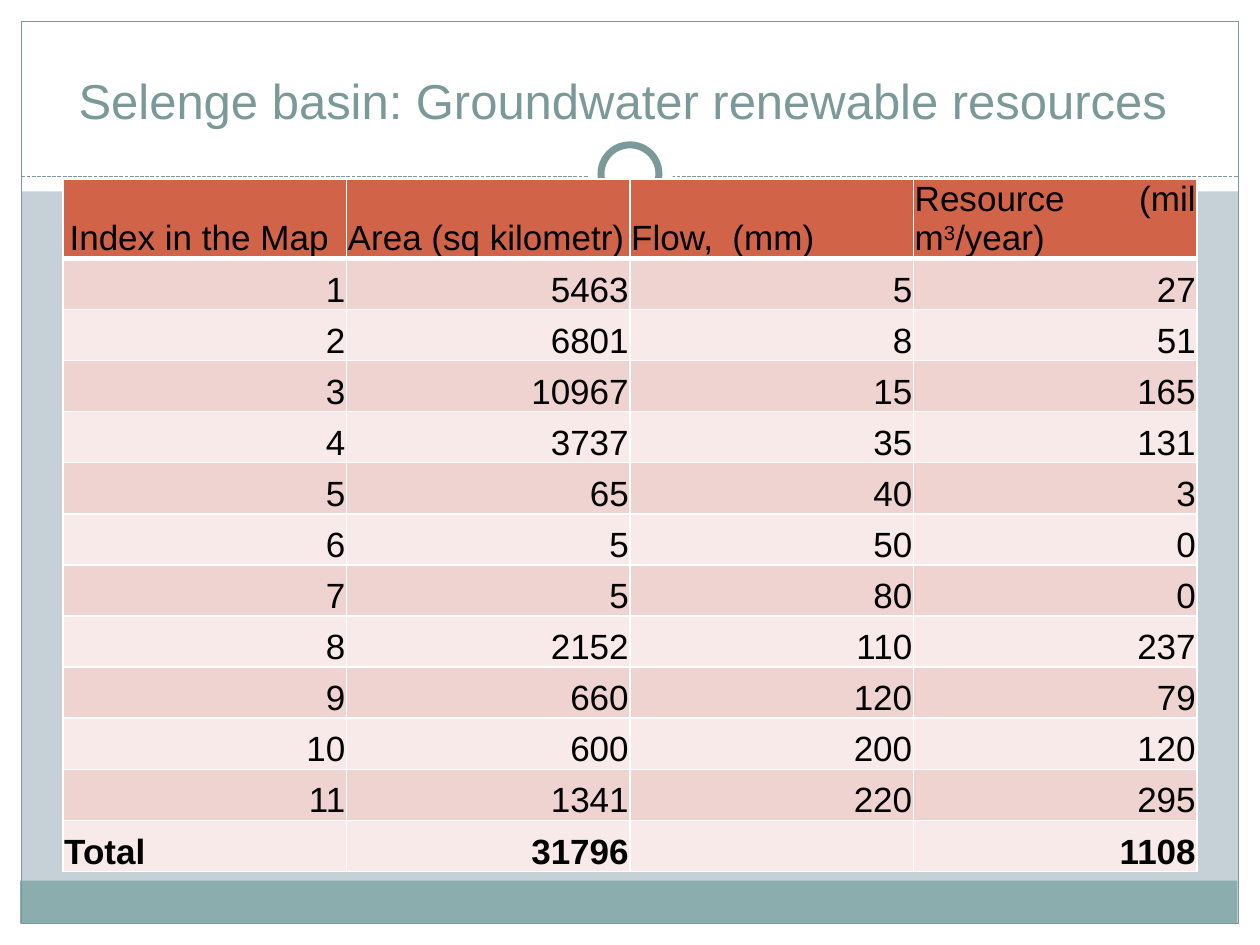
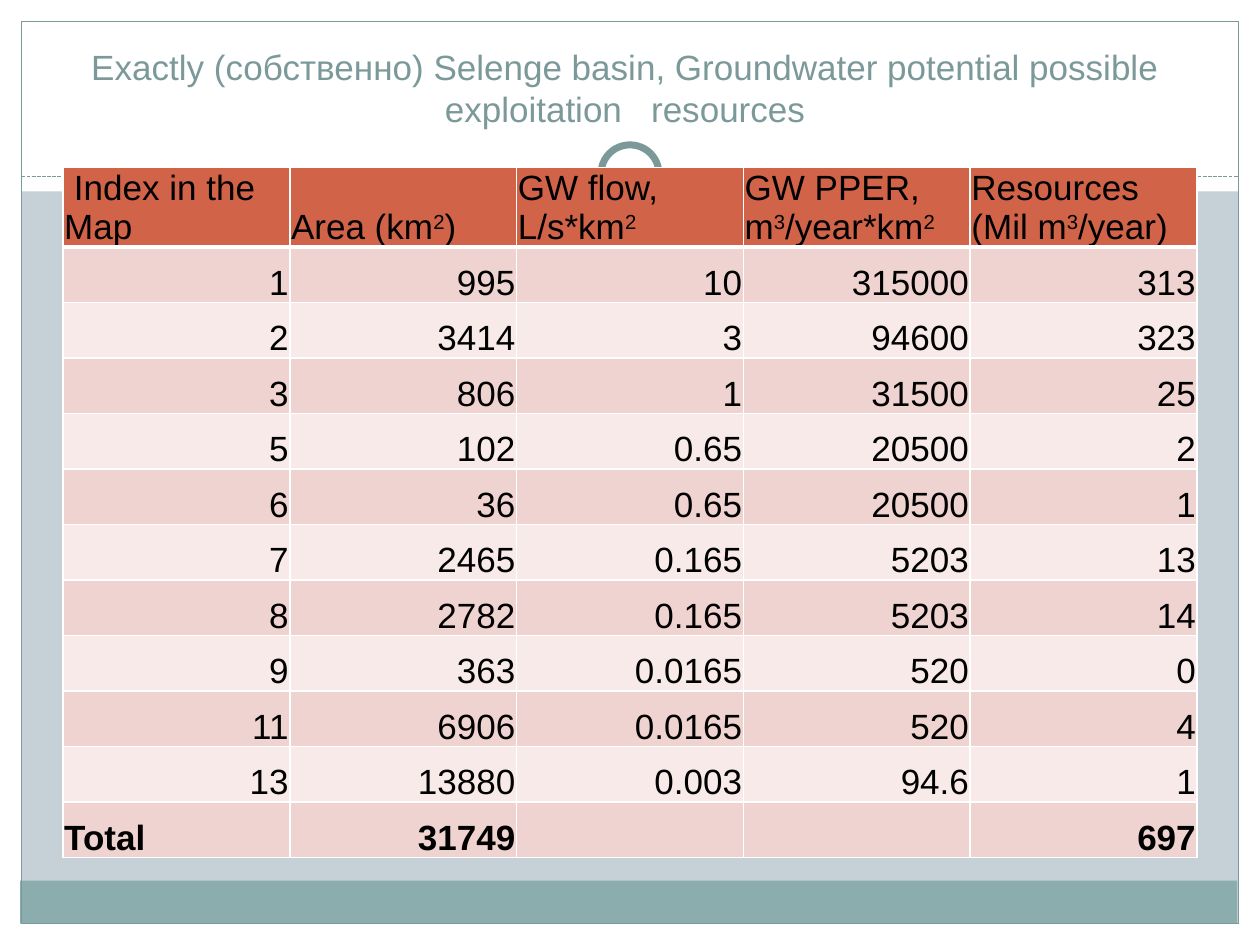
"""Build two slides of Selenge basin groundwater resource tables."""
import dataclasses
import typing

import lxml.etree
import pptx
import pptx.dml.color
import pptx.enum.dml
import pptx.enum.shapes
import pptx.enum.text
import pptx.oxml.ns
import pptx.slide
import pptx.table
import pptx.text.text
import pptx.util

Inches = pptx.util.Inches
Pt = pptx.util.Pt
Align = pptx.enum.text.PP_ALIGN
Anchor = pptx.enum.text.MSO_ANCHOR
Preset = pptx.enum.shapes.MSO_SHAPE
qn = pptx.oxml.ns.qn

FONT = "Arial"
WHITE, BLACK = "FFFFFF", "000000"
BACKDROP, TEAL, FOOTER = "C5D1D7", "7C999A", "8CADAE"
HEADER, BANDS = "D16349", ("EED3D0", "F7EAE9")
HEADER_HEIGHT = 0.62
CELL_FORMAT = {
    "vertical_anchor": Anchor.BOTTOM,
    "margin_left": Inches(0.01),
    "margin_right": Inches(0.01),
    "margin_top": Inches(0.01),
    "margin_bottom": 0,
}
TITLE_FORMAT = {
    "vertical_anchor": Anchor.BOTTOM,
    "word_wrap": True,
    "auto_size": pptx.enum.text.MSO_AUTO_SIZE.NONE,
}


class Box(typing.NamedTuple):
    left: float
    top: float
    width: float
    height: float

    def lengths(self) -> list[int]:
        return [Inches(value) for value in self]


@dataclasses.dataclass(frozen=True)
class FramePart:
    box: Box
    fill: str | None = WHITE
    line: str | None = None
    weight: float = 0.75
    preset: Preset = Preset.RECTANGLE


class Run(typing.NamedTuple):
    text: str
    size: float = 20
    raised: bool = False


class Heading(typing.NamedTuple):
    runs: list[Run]
    align: Align = Align.LEFT


@dataclasses.dataclass(frozen=True)
class ResourceSlide:
    title: str
    title_size: float
    title_box: Box
    table_box: Box
    headings: list[Heading]
    rows: list[str]


SQUARED, CUBED = Run("2", raised=True), Run("3", raised=True)

FRAME_BANDS = [
    FramePart(Box(0, 7.33, 10, 0.17)),
    FramePart(Box(0, 0, 10, 1.52)),
    FramePart(Box(0, 0, 0.17, 7.5)),
    FramePart(Box(9.83, 0, 0.17, 7.5)),
    FramePart(Box(0.16, 6.99, 9.66, 0.34), FOOTER),
    FramePart(Box(0.17, 0.17, 9.66, 7.16), None, TEAL),
]
FRAME_RING = [
    FramePart(Box(4.67, 1.05, 0.67, 0.67), preset=Preset.OVAL),
    FramePart(Box(4.77, 1.15, 0.46, 0.46), WHITE, TEAL, 4, Preset.OVAL),
]

RESOURCE_SLIDES = [
    ResourceSlide(
        "Selenge basin: Groundwater renewable resources ",
        28,
        Box(0.33, 0.25, 9.33, 0.83),
        Box(0.5, 1.42, 9, 5.49),
        [
            Heading([Run(" ", 11), Run("Index in the Map")]),
            Heading([Run("Area (sq kilometr)")], Align.JUSTIFY),
            Heading([Run("Flow,  (mm)")], Align.JUSTIFY),
            Heading([Run("Resource (mil m"), CUBED, Run("/year)")], Align.JUSTIFY),
        ],
        [
            "1|5463|5|27",
            "2|6801|8|51",
            "3|10967|15|165",
            "4|3737|35|131",
            "5|65|40|3",
            "6|5|50|0",
            "7|5|80|0",
            "8|2152|110|237",
            "9|660|120|79",
            "10|600|200|120",
            "11|1341|220|295",
            "Total|31796||1108",
        ],
    ),
    ResourceSlide(
        "Exactly (собственно) Selenge basin, Groundwater potential possible  exploitation   resources ",
        20,
        Box(0.5, 0.3, 9, 0.78),
        Box(0.5, 1.33, 9, 5.47),
        [
            Heading([Run(" Index in the Map")]),
            Heading([Run("Area (km"), SQUARED, Run(")")]),
            Heading([Run("GW flow, L/s*km"), SQUARED]),
            Heading([Run("GW PPER, m"), CUBED, Run("/year*km"), SQUARED]),
            Heading([Run("Resources (Mil m"), CUBED, Run("/year)")], Align.JUSTIFY),
        ],
        [
            "1|995|10|315000|313",
            "2|3414|3|94600|323",
            "3|806|1|31500|25",
            "5|102|0.65|20500|2",
            "6|36|0.65|20500|1",
            "7|2465|0.165|5203|13",
            "8|2782|0.165|5203|14",
            "9|363|0.0165|520|0",
            "11|6906|0.0165|520|4",
            "13|13880|0.003|94.6|1",
            "Total|31749|||697",
        ],
    ),
]


def rgb(value: str) -> pptx.dml.color.RGBColor:
    return pptx.dml.color.RGBColor.from_string(value)


def apply_format(target: typing.Any, values: dict[str, typing.Any]) -> None:
    for name, value in values.items():
        setattr(target, name, value)


def add_run(paragraph: pptx.text.text._Paragraph, part: Run, color: str, bold: bool = False) -> None:
    run = paragraph.add_run()
    run.text = part.text
    apply_format(run.font, {"name": FONT, "size": Pt(part.size), "bold": bold})
    run.font.color.rgb = rgb(color)
    if part.raised:
        run._r.get_or_add_rPr().set("baseline", "30000")


def draw_frame_part(slide: pptx.slide.Slide, part: FramePart) -> None:
    shape = slide.shapes.add_shape(part.preset, *part.box.lengths())
    shape.shadow.inherit = False
    if part.fill:
        shape.fill.solid()
        shape.fill.fore_color.rgb = rgb(part.fill)
    else:
        shape.fill.background()
    if part.line:
        shape.line.color.rgb = rgb(part.line)
        shape.line.width = Pt(part.weight)
    else:
        shape.line.fill.background()


def draw_frame(slide: pptx.slide.Slide) -> None:
    for part in FRAME_BANDS:
        draw_frame_part(slide, part)
    divider = slide.shapes.add_connector(
        pptx.enum.shapes.MSO_CONNECTOR.STRAIGHT, Inches(0.17), Inches(1.4), Inches(9.83), Inches(1.4)
    )
    divider.line.color.rgb = rgb(TEAL)
    apply_format(divider.line, {"width": Pt(0.75), "dash_style": pptx.enum.dml.MSO_LINE.SQUARE_DOT})
    lxml.etree.SubElement(divider.element.find(qn("p:spPr")), qn("a:effectLst"))
    for part in FRAME_RING:
        draw_frame_part(slide, part)


def place_title(slide: pptx.slide.Slide, content: ResourceSlide) -> None:
    title = slide.shapes.title
    title.element.getparent().append(title.element)
    apply_format(title, dict(zip(("left", "top", "width", "height"), content.title_box.lengths())))
    apply_format(title.text_frame, TITLE_FORMAT)
    paragraph = title.text_frame.paragraphs[0]
    paragraph.alignment = Align.CENTER
    add_run(paragraph, Run(content.title, content.title_size), TEAL)


def add_borders(cell: pptx.table._Cell, row: int) -> None:
    properties = cell._tc.get_or_add_tcPr()
    widths = {"L": 1, "R": 1, "T": 3 if row == 1 else 1, "B": 3 if row == 0 else 1}
    for side, width in widths.items():
        border = lxml.etree.SubElement(properties, qn(f"a:ln{side}"), w=str(Pt(width)))
        fill = lxml.etree.SubElement(border, qn("a:solidFill"))
        lxml.etree.SubElement(fill, qn("a:srgbClr"), val=WHITE)


def fill_cell(cell: pptx.table._Cell, row: int, heading: Heading, bold: bool) -> None:
    apply_format(cell, CELL_FORMAT)
    add_borders(cell, row)
    cell.fill.solid()
    cell.fill.fore_color.rgb = rgb(BANDS[(row - 1) % 2] if row else HEADER)
    paragraph = cell.text_frame.paragraphs[0]
    paragraph.alignment = heading.align
    for part in heading.runs:
        if part.text:
            add_run(paragraph, part, BLACK, bold)


def draw_table(slide: pptx.slide.Slide, content: ResourceSlide) -> None:
    box, row_count = content.table_box, len(content.rows)
    frame = slide.shapes.add_table(row_count + 1, len(content.headings), *box.lengths())
    table = frame.table
    apply_format(table, {"first_row": False, "horz_banding": False})
    for row in table.rows:
        row.height = Inches((box.height - HEADER_HEIGHT) / row_count)
    table.rows[0].height = Inches(HEADER_HEIGHT)
    for column, heading in enumerate(content.headings):
        fill_cell(table.cell(0, column), 0, heading, False)
    for row, line in enumerate(content.rows, 1):
        total = line.startswith("Total")
        for column, value in enumerate(line.split("|")):
            align = Align.LEFT if value == "Total" else Align.RIGHT
            fill_cell(table.cell(row, column), row, Heading([Run(value)], align), total)


def main() -> None:
    deck = pptx.Presentation()
    apply_format(deck, {"slide_width": Inches(10), "slide_height": Inches(7.5)})
    backdrop = deck.slide_master.background.fill
    backdrop.solid()
    backdrop.fore_color.rgb = rgb(BACKDROP)
    title_only = deck.slide_layouts.get_by_name("Title Only")
    for content in RESOURCE_SLIDES:
        slide = deck.slides.add_slide(title_only)
        draw_frame(slide)
        place_title(slide, content)
        draw_table(slide, content)
    deck.save("out.pptx")


if __name__ == "__main__":
    main()
